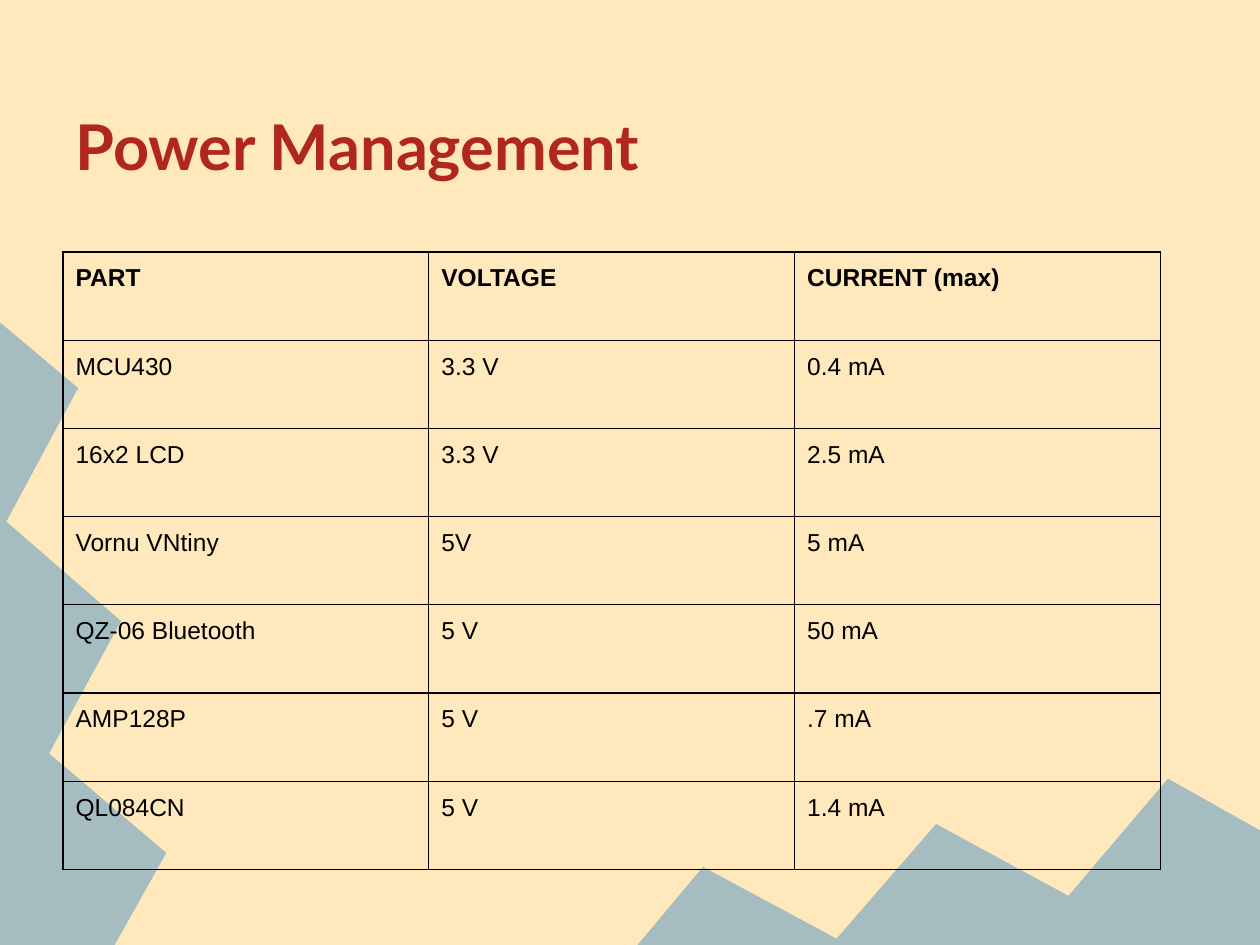
from dataclasses import dataclass

from lxml import etree
from pptx import Presentation
from pptx.dml.color import RGBColor
from pptx.enum.text import MSO_ANCHOR, MSO_AUTO_SIZE, PP_ALIGN
from pptx.oxml.ns import qn
from pptx.util import Inches, Pt

LEFT = PP_ALIGN.LEFT
BOTTOM = MSO_ANCHOR.BOTTOM
NO_AUTOFIT = MSO_AUTO_SIZE.NONE
TITLE_ONLY = 5


@dataclass(frozen=True)
class Theme:
    background: str = "FFE8BB"
    zigzag: str = "A5BDC0"
    title: str = "B0271C"
    ink: str = "000000"
    title_font: str = "Lato"
    body_font: str = "Arial"
    title_size: int = 36
    body_size: int = 14
    border_width: float = 0.75
    inset: float = 0.1


THEME = Theme()

LEFT_ZIGZAG = [(0, 2.56), (0, 7.5), (0.91, 7.5), (1.32, 6.77), (0.39, 5.98),
               (0.96, 4.93), (0.05, 4.14), (0.62, 3.08)]
BOTTOM_ZIGZAG = [(5.06, 7.5), (10, 7.5), (10, 6.59), (9.27, 6.18), (8.48, 7.11),
                 (7.43, 6.54), (6.64, 7.45), (5.58, 6.88)]

POWER_BUDGET = [
    ("PART", "VOLTAGE", "CURRENT (max)"),
    ("MCU430", "3.3 V", "0.4 mA"),
    ("16x2 LCD", "3.3 V", "2.5 mA"),
    ("Vornu VNtiny", "5V", "5 mA"),
    ("QZ-06 Bluetooth", "5 V", "50 mA"),
    ("AMP128P", "5 V", ".7 mA"),
    ("QL084CN", "5 V", "1.4 mA"),
]


def color(hex_value):
    return RGBColor.from_string(hex_value)


def format_text(paragraph, font_name, size, hex_value, bold):
    paragraph.alignment = LEFT
    for run in paragraph.runs:
        run.font.name = font_name
        run.font.size = Pt(size)
        run.font.color.rgb = color(hex_value)
        run.font.bold = bold


def set_insets(target):
    inset = Inches(THEME.inset)
    target.margin_left = target.margin_right = inset
    target.margin_top = target.margin_bottom = inset


def add_zigzag(slide, points):
    corners = [(Inches(x), Inches(y)) for x, y in points]
    builder = slide.shapes.build_freeform(*corners[0])
    builder.add_line_segments(corners[1:], close=True)
    zigzag = builder.convert_to_shape()
    zigzag.shadow.inherit = False
    zigzag.fill.solid()
    zigzag.fill.fore_color.rgb = color(THEME.zigzag)
    zigzag.line.fill.background()


def set_title(slide, text):
    title = slide.shapes.title
    title.left, title.top = Inches(0.5), Inches(0.3)
    title.width, title.height = Inches(9), Inches(1.25)
    frame = title.text_frame
    frame.text = text
    frame.word_wrap = True
    frame.auto_size = NO_AUTOFIT
    frame.vertical_anchor = BOTTOM
    set_insets(frame)
    format_text(frame.paragraphs[0], THEME.title_font, THEME.title_size,
                THEME.title, True)


def set_borders(cell):
    properties = cell._tc.get_or_add_tcPr()
    # Border lines must come before the cell's fill
    for position, side in enumerate(("a:lnL", "a:lnR", "a:lnT", "a:lnB")):
        line = etree.Element(qn(side), w=str(Pt(THEME.border_width)))
        fill = etree.SubElement(line, qn("a:solidFill"))
        etree.SubElement(fill, qn("a:srgbClr"), val=THEME.ink)
        properties.insert(position, line)


def add_power_table(slide, rows):
    table = slide.shapes.add_table(
        len(rows), len(rows[0]),
        Inches(0.5), Inches(2), Inches(8.71), Inches(4.9)).table
    table.first_row = table.horz_banding = False
    for row_index, values in enumerate(rows):
        for column_index, value in enumerate(values):
            cell = table.cell(row_index, column_index)
            cell.text_frame.text = value
            cell.fill.background()
            set_insets(cell)
            set_borders(cell)
            format_text(cell.text_frame.paragraphs[0], THEME.body_font,
                        THEME.body_size, THEME.ink, row_index == 0)


def main():
    presentation = Presentation()
    presentation.slide_width = Inches(10)
    presentation.slide_height = Inches(7.5)
    slide = presentation.slides.add_slide(presentation.slide_layouts[TITLE_ONLY])

    # Background and decoration
    slide.background.fill.solid()
    slide.background.fill.fore_color.rgb = color(THEME.background)
    for points in (LEFT_ZIGZAG, BOTTOM_ZIGZAG):
        add_zigzag(slide, points)

    # Title and table
    set_title(slide, "Power Management")
    add_power_table(slide, POWER_BUDGET)

    presentation.save("out.pptx")


if __name__ == "__main__":
    main()
